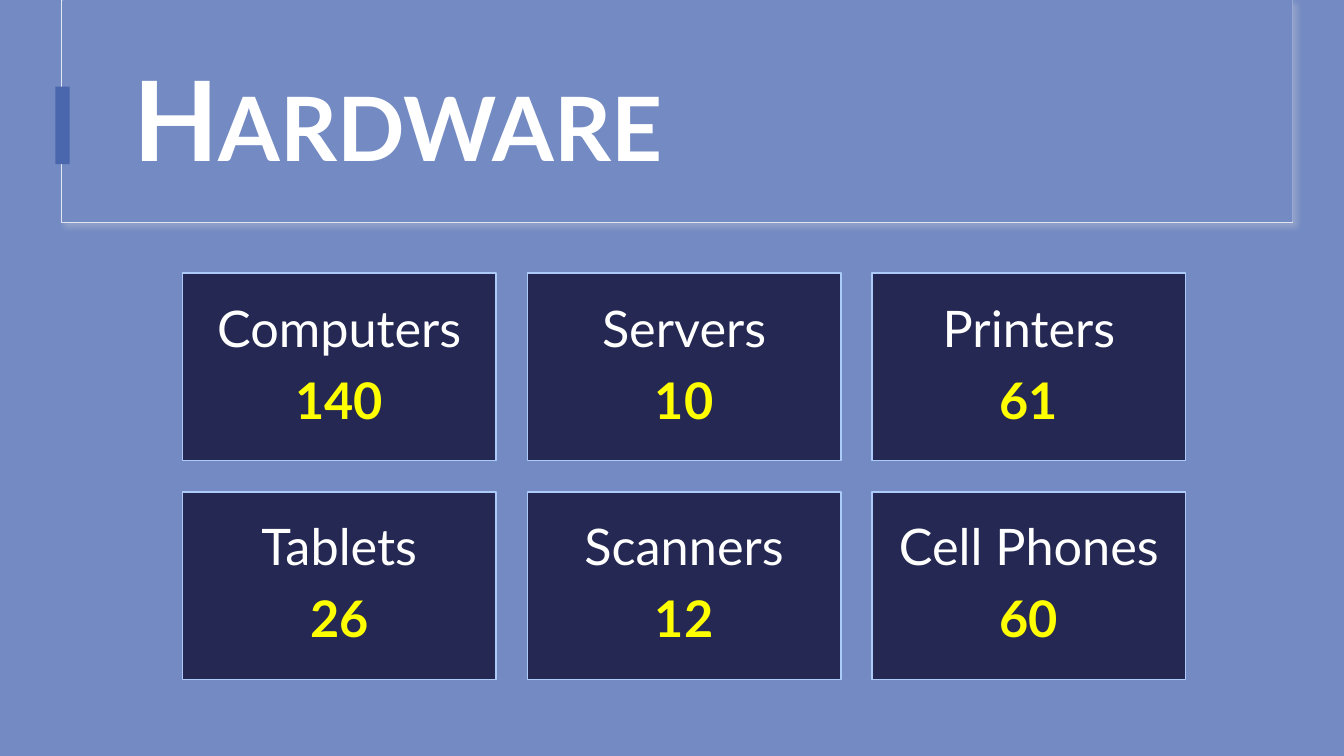
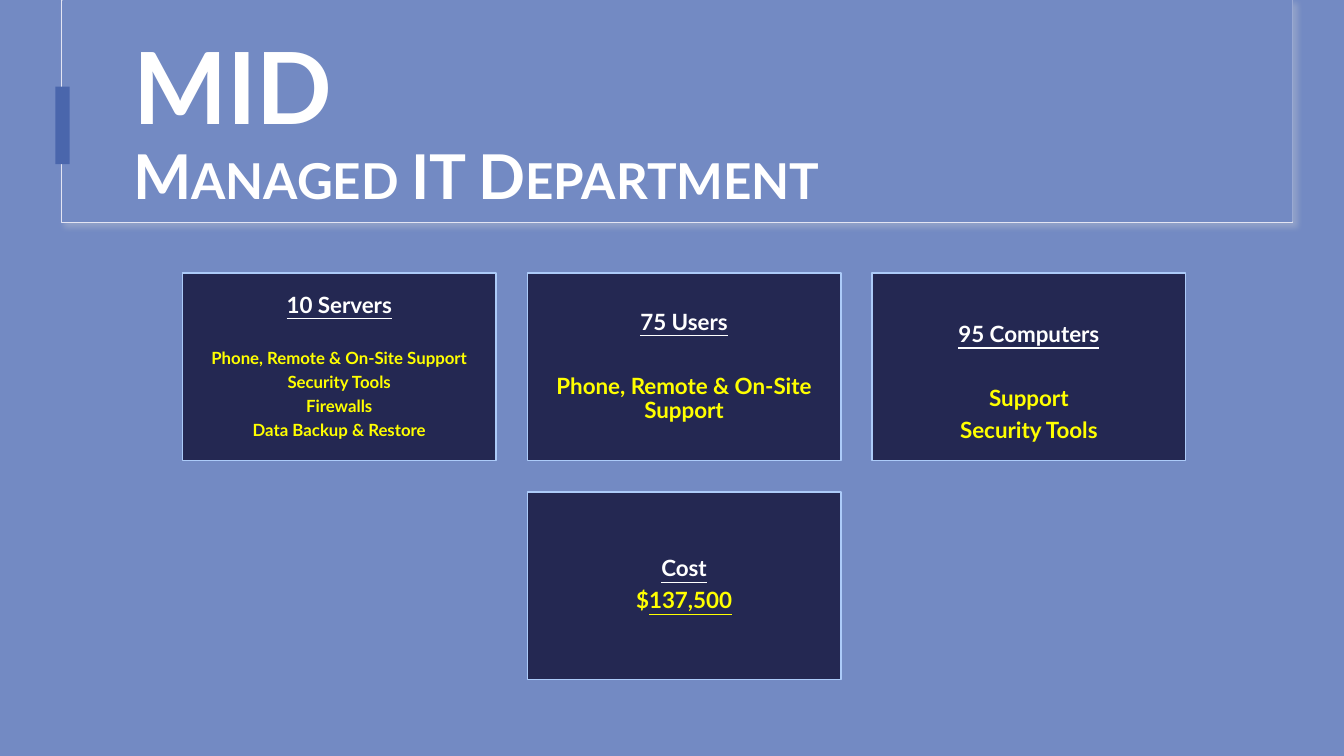
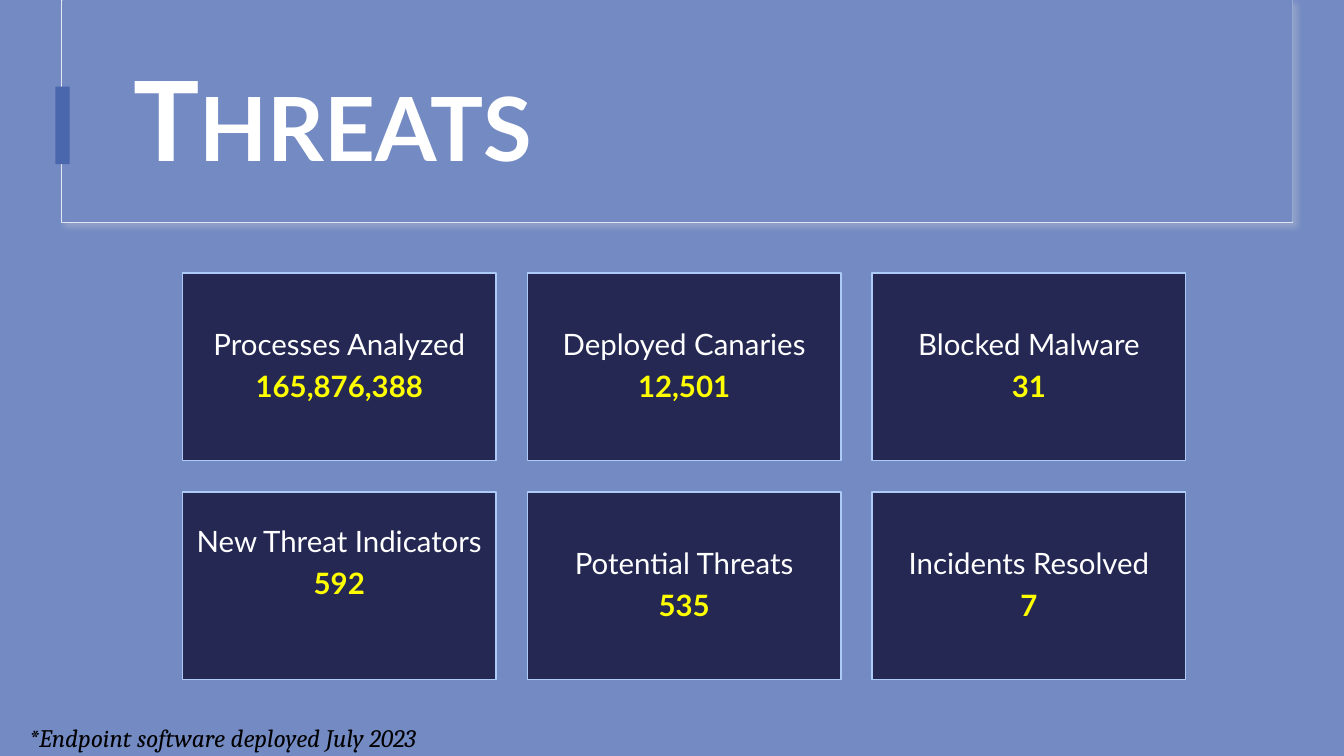
from lxml import etree
from pptx import Presentation
from pptx.dml.color import RGBColor
from pptx.enum.shapes import MSO_SHAPE as SHAPE
from pptx.enum.text import MSO_ANCHOR as ANCHOR, MSO_AUTO_SIZE as AUTO, PP_ALIGN as ALIGN
from pptx.oxml.ns import qn
from pptx.util import Inches, Pt

# Colours and fonts
SKY = RGBColor(0x73, 0x8A, 0xC3)
BLUE = RGBColor(0x4A, 0x66, 0xAC)
NAVY = RGBColor(0x24, 0x28, 0x52)
ICE = RGBColor(0xAC, 0xCB, 0xF9)
PALE = RGBColor(0xE4, 0xE5, 0xF3)
WHITE = RGBColor(0xFF, 0xFF, 0xFF)
YELLOW = RGBColor(0xFF, 0xFF, 0x00)
BLACK = RGBColor(0, 0, 0)
FONT = "Lato"

# Card grid, in inches
LEFT, TOP = 1.81, 2.71
CARD_W, CARD_H, GAP = 3.11, 1.86, 0.31
COLS = 3

# Vertical rhythm, as shares of the text size
LINE = 0.9
AFTER = 0.35
BLANK = 1.43


def add_box(s, x, y, w, h, fill, line=None, width=1):
    sp = s.shapes.add_shape(SHAPE.RECTANGLE, Inches(x), Inches(y), Inches(w), Inches(h))
    sp.shadow.inherit = False
    sp.fill.solid()
    sp.fill.fore_color.rgb = fill
    if line is None:
        sp.line.fill.background()
    else:
        sp.line.color.rgb = line
        sp.line.width = Pt(width)
    return sp


def add_run(p, text, size, color, font=FONT, **style):
    r = p.add_run()
    r.text = text
    f = r.font
    f.name, f.size = font, Pt(size)
    f.color.rgb = color
    for name, value in style.items():
        setattr(f, name, value)
    return r


def add_shadow(sp):
    effects = sp.element.spPr.find(qn("a:effectLst"))
    shadow = etree.SubElement(effects, qn("a:outerShdw"), blurRad=str(Pt(4)),
                              dist=str(Pt(3)), dir=str(45 * 60000))
    color = etree.SubElement(shadow, qn("a:srgbClr"), val="D9D9D9")
    etree.SubElement(color, qn("a:alpha"), val="30000")


def style_layout(layout, s):
    """Draw the title frame with s, then move it behind the layout's title."""
    layout.background.fill.solid()
    layout.background.fill.fore_color.rgb = SKY
    frame = add_box(s, 0.61, 0, 12.21, 2.21, SKY, PALE, 0.75)
    add_shadow(frame)
    panel = add_box(s, 0.62, 0, 12.2, 2.2, SKY)
    marker = add_box(s, 0.55, 0.86, 0.14, 0.77, BLUE)
    for i, sp in enumerate((frame, panel, marker)):
        sp.element.nvSpPr.cNvPr.id = 20 + i
        layout.shapes.element.insert(2 + i, sp.element)
    title = layout.placeholders[0]
    title.left, title.top = Inches(1.22), Inches(0.6)
    title.width, title.height = Inches(11.12), Inches(1.29)


def set_title(s, *lines):
    """Each line is a (text, size) pair."""
    tf = s.shapes.title.text_frame
    tf.auto_size = AUTO.NONE
    tf.vertical_anchor = ANCHOR.MIDDLE
    p = tf.paragraphs[0]
    p.alignment = ALIGN.LEFT
    p.line_spacing = LINE
    for i, (text, size) in enumerate(lines):
        if i:
            p.add_line_break()
        r = add_run(p, text, size, WHITE, bold=True)
        r.font._element.set("cap", "small")


def add_card(s, cell, heading, lines, size, body=None, gap=False, strong=False,
             pad_top=0, pad_bottom=0):
    """Fill one grid cell; gap leaves a body line free below the heading."""
    body = body or size
    row, col = divmod(cell, COLS)
    sp = add_box(s, LEFT + col * (CARD_W + GAP), TOP + row * (CARD_H + GAP),
                 CARD_W, CARD_H, NAVY, ICE)
    tf = sp.text_frame
    tf.word_wrap = True
    tf.vertical_anchor = ANCHOR.MIDDLE
    inset = round(body / 240, 2)
    tf.margin_left = tf.margin_right = Inches(inset)
    tf.margin_top = Inches(inset + pad_top)
    tf.margin_bottom = Inches(inset + pad_bottom)
    for i, text in enumerate((heading, *lines)):
        p = tf.add_paragraph() if i else tf.paragraphs[0]
        p.alignment = ALIGN.CENTER
        p.line_spacing = LINE
        if i:
            p.space_after = Pt(AFTER * body)
            add_run(p, text, body, YELLOW, bold=True)
        else:
            p.space_after = Pt(AFTER * size + (BLANK * body if gap else 0))
            add_run(p, text, size, WHITE, bold=strong, underline=strong)
    return tf


def add_note(s, text):
    tb = s.shapes.add_textbox(Inches(0.19), Inches(7.12), Inches(4.28), Inches(0.38))
    tb.text_frame.word_wrap = True
    add_run(tb.text_frame.paragraphs[0], text, 18, BLACK, "Cambria", italic=True)


def main():
    prs = Presentation()
    prs.slide_width, prs.slide_height = Inches(13.33), Inches(7.5)
    layout = prs.slide_layouts[5]
    hardware, managed, threats = [prs.slides.add_slide(layout) for _ in range(3)]
    style_layout(layout, hardware)

    # Hardware counts
    set_title(hardware, ("Hardware", 79.2))
    counts = [("Computers", "140"), ("Servers", "10"), ("Printers", "61"),
              ("Tablets", "26"), ("Scanners", "12"), ("Cell Phones", "60")]
    for cell, (name, count) in enumerate(counts):
        add_card(hardware, cell, name, [count], 36)

    # Managed services and their cost
    set_title(managed, ("MID", 71.1), ("Managed IT Department", 44.1))
    support = "Phone, Remote & On-Site Support"
    add_card(managed, 0, "10 Servers",
             [support, "Security Tools", "Firewalls", "Data Backup & Restore"],
             16, body=12, gap=True, strong=True)
    add_card(managed, 1, "75 Users", [support], 16, gap=True, strong=True)
    add_card(managed, 2, "95 Computers", ["Support", "Security Tools"],
             16, gap=True, strong=True, pad_top=0.32)
    cost = add_card(managed, 4, "Cost", ["$"], 16, strong=True)
    add_run(cost.paragraphs[-1], "137,500", 16, YELLOW, bold=True, underline=True)

    # Threat figures
    set_title(threats, ("Threats", 79))
    figures = [("Processes Analyzed", "165,876,388", 0), ("Deployed Canaries", "12,501", 0),
               ("Blocked Malware", "31", 0), ("New Threat Indicators", "592", 0.42),
               ("Potential Threats", "535", 0), ("Incidents Resolved", "7", 0)]
    for cell, (name, figure, pad) in enumerate(figures):
        add_card(threats, cell, name, [figure], 21, pad_bottom=pad)
    add_note(threats, "*Endpoint software deployed July 2023")

    prs.save("out.pptx")


if __name__ == "__main__":
    main()
